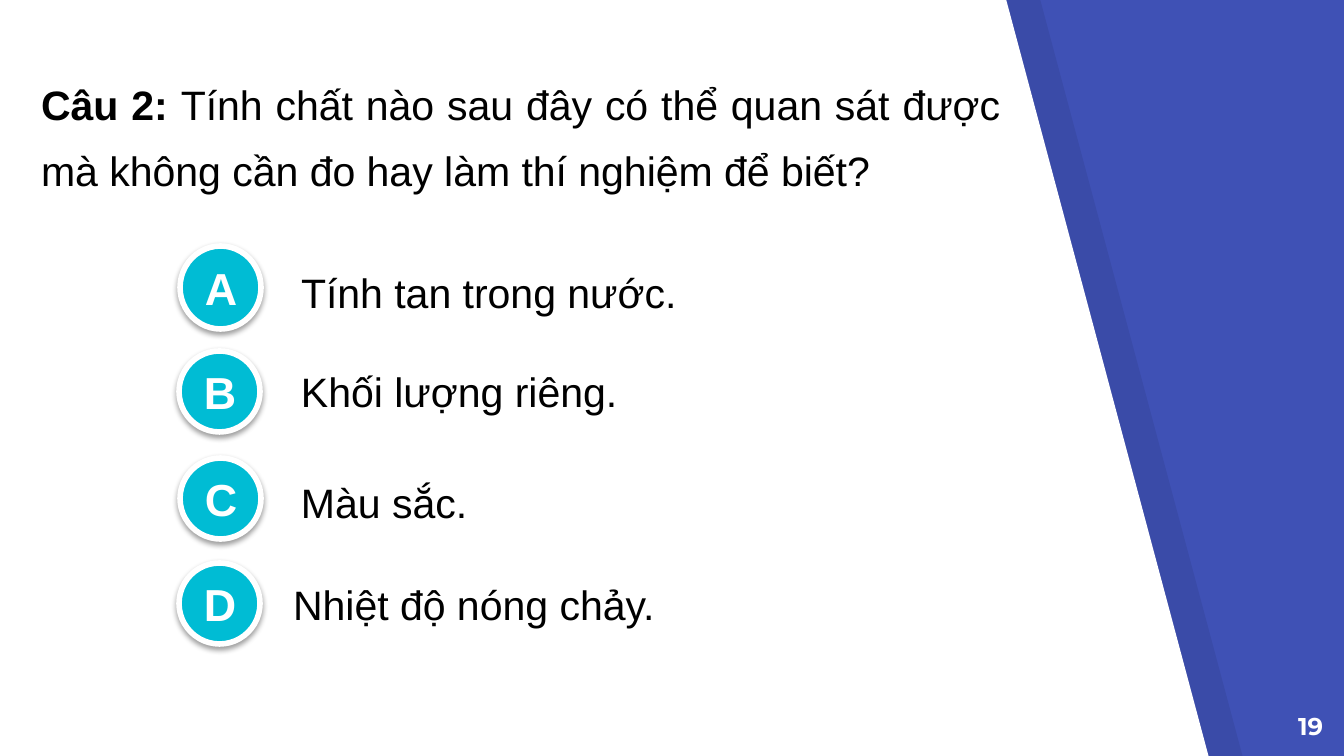
from lxml import etree
from pptx import Presentation
from pptx.dml.color import RGBColor
from pptx.enum.shapes import MSO_SHAPE
from pptx.enum.text import MSO_ANCHOR, PP_ALIGN
from pptx.oxml import parse_xml
from pptx.oxml.ns import nsdecls, qn
from pptx.util import Pt

OVAL = MSO_SHAPE.OVAL
TOP, MIDDLE = MSO_ANCHOR.TOP, MSO_ANCHOR.MIDDLE
LEFT, CENTER, RIGHT, JUSTIFY = PP_ALIGN.LEFT, PP_ALIGN.CENTER, PP_ALIGN.RIGHT, PP_ALIGN.JUSTIFY

COLORS = {"blue": "3F51B5", "cyan": "00BCD4", "white": "FFFFFF", "black": "000000"}
WIDTH, HEIGHT = 1344, 756
SCALE = 914400 / 134.4

QUESTION_BOX = (28, 55, 986, 148)
QUESTION = [
    ("Câu 2: ", True),
    ("Tính chất nào sau đây có thể quan sát được mà không cần đo hay làm thí nghiệm để biết?", False),
]
# letter, badge box, answer, answer box, line spacing
ANSWERS = [
    ("A", (180, 246, 81, 83), "Tính tan trong nước.", (288, 238, 637, 90), 1.35),
    ("B", (179, 351, 81, 81), "Khối lượng riêng.", (288, 356, 837, 71), 1),
    ("C", (180, 458, 81, 81), "Màu sắc.", (288, 458, 469, 71), 1.35),
    ("D", (179, 563, 81, 81), "Nhiệt độ nóng chảy.", (280, 569, 1016, 71), 1),
]
PAGE_NUMBER, PAGE_BOX = "19", (1255, 698, 81, 58)

SHADOW = f"""<a:effectLst {nsdecls('a')}>
  <a:outerShdw blurRad="{Pt(3.1)}" dist="{Pt(1.6)}" dir="5400000" algn="ctr" rotWithShape="0">
    <a:srgbClr val="{COLORS['black']}"><a:alpha val="38000"/></a:srgbClr>
  </a:outerShdw>
</a:effectLst>"""


def px(n):
    return round(n * SCALE)


def rgb(name):
    return RGBColor.from_string(COLORS[name])


def format_text(tf, size, color, bold=False, font="Arial", align=LEFT,
                anchor=MIDDLE, spacing=1, inset=13):
    tf.word_wrap = True
    tf.vertical_anchor = anchor
    tf.margin_left = tf.margin_right = px(13)
    tf.margin_top = tf.margin_bottom = px(inset)
    for p in tf.paragraphs:
        p.alignment = align
        p.line_spacing = spacing
        for r in p.runs:
            r.font.size = Pt(size)
            r.font.name = font
            r.font.bold = bold
            r.font.color.rgb = rgb(color)


def add_text(slide, text, box, size, color, **style):
    tf = slide.shapes.add_textbox(*map(px, box)).text_frame
    tf.text = text
    format_text(tf, size, color, **style)


def add_panel(slide, left, color, opacity=100):
    """Draw a slanted panel whose left edge is at the given px."""
    builder = slide.shapes.build_freeform(left, -1, scale=SCALE)
    builder.add_line_segments([(left, 758), (left + 1209, 758), (left + 1006, -1)])
    sp = builder.convert_to_shape()
    sp.shadow.inherit = False
    sp.fill.solid()
    sp.fill.fore_color.rgb = rgb(color)
    sp.line.fill.background()
    if opacity < 100:
        clr = sp.fill._xPr.find(".//" + qn("a:srgbClr"))
        etree.SubElement(clr, qn("a:alpha")).set("val", str(opacity * 1000))


def add_badge(slide, letter, box):
    sp = slide.shapes.add_shape(OVAL, *map(px, box))
    sp.fill.solid()
    sp.fill.fore_color.rgb = rgb("cyan")
    sp.line.color.rgb = rgb("white")
    sp.line.width = Pt(3)
    sp._element.spPr.append(parse_xml(SHADOW))
    sp.text_frame.text = letter
    format_text(sp.text_frame, 24, "white", bold=True, align=CENTER)


def add_question(slide):
    title = slide.shapes.title
    title.left, title.top, title.width, title.height = map(px, QUESTION_BOX)
    tf = title.text_frame
    p = tf.paragraphs[0]
    for text, _ in QUESTION:
        p.add_run().text = text
    format_text(tf, 22, "black", align=JUSTIFY, anchor=TOP, spacing=1.35, inset=7)
    for r, (_, bold) in zip(p.runs, QUESTION):
        r.font.bold = bold


def main():
    prs = Presentation()
    prs.slide_width, prs.slide_height = px(WIDTH), px(HEIGHT)
    slide = prs.slides.add_slide(prs.slide_layouts[5])
    slide.background.fill.solid()
    slide.background.fill.fore_color.rgb = rgb("blue")

    add_panel(slide, 34, "black", opacity=7)
    add_panel(slide, 0, "white")
    # The title comes with the layout, so it is lifted above the panels.
    slide.shapes._spTree.append(slide.shapes.title._element)
    add_question(slide)
    for letter, badge_box, answer, answer_box, spacing in ANSWERS:
        add_badge(slide, letter, badge_box)
        add_text(slide, answer, answer_box, 22, "black", spacing=spacing)
    add_text(slide, PAGE_NUMBER, PAGE_BOX, 13, "white", bold=True,
             font="Montserrat", align=RIGHT, anchor=TOP)
    prs.save("out.pptx")


if __name__ == "__main__":
    main()
